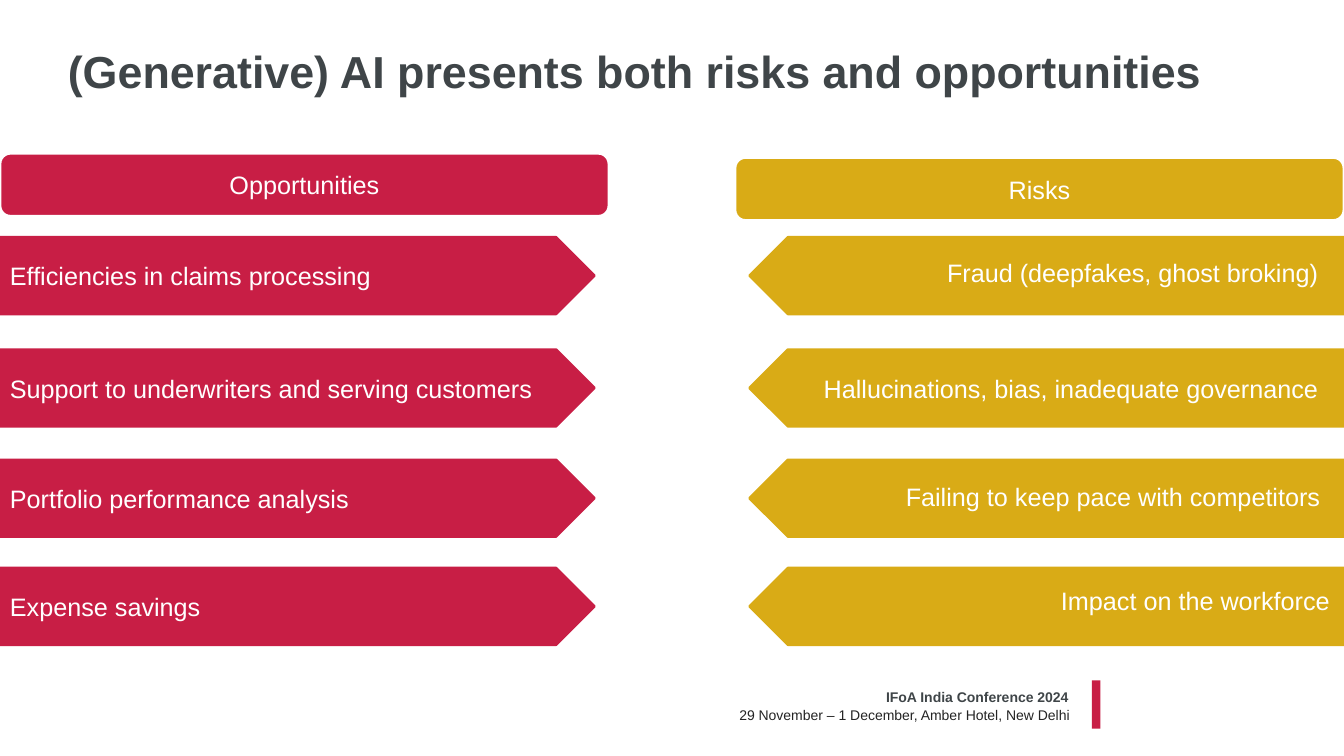
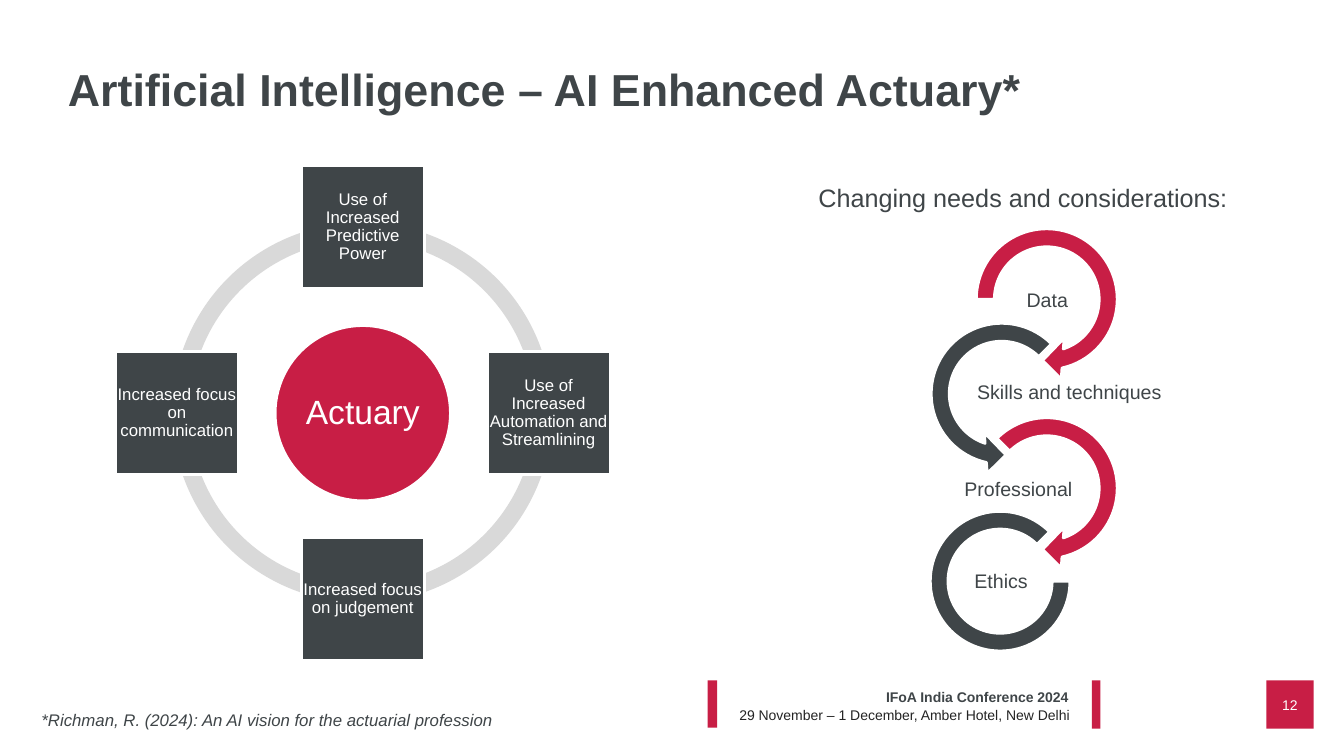
from pptx import Presentation
from pptx import util as u
from pptx.dml import color
from pptx.enum import shapes, text

PX = 9525
FONT = "Arial"
CRIMSON, GOLD, SLATE = "C81E45", "D9AB16", "3F4548"
INK, SILVER, WHITE = "242424", "D9D9D9", "FFFFFF"
PRESET = shapes.MSO_SHAPE
LEFT, CENTER, RIGHT = text.PP_ALIGN.LEFT, text.PP_ALIGN.CENTER, text.PP_ALIGN.RIGHT
TOP, MIDDLE = text.MSO_ANCHOR.TOP, text.MSO_ANCHOR.MIDDLE
QUARTER = 54

OPPORTUNITIES = [
    "Efficiencies in claims processing",
    "Support to underwriters and serving customers",
    "Portfolio performance analysis",
    "Expense savings",
]
RISKS = [
    ("Fraud (deepfakes, ghost broking)", 1265, 14),
    ("Hallucinations, bias, inadequate governance", 1265, 18),
    ("Failing to keep pace with competitors", 1267, 16),
    ("Impact on the workforce", 1276, 12),
]
ROW_TOPS = [226, 333, 438, 541]
SKILL_SHIFTS = [
    ("Use of Increased Predictive Power", 0, -1),
    ("Use of Increased Automation and Streamlining", 1, 0),
    ("Increased focus on judgement", 0, 1),
    ("Increased focus on communication", -1, 0),
]
NEEDS = [
    ("Data", 121, 79, 87),
    ("Skills and techniques", 142, 167, 197),
    ("Professional", 94, 259, 152),
    ("Ethics", 77, 347, 87),
]
LOOPS = [
    (PRESET.CIRCULAR_ARROW, 43, 0, 156, CRIMSON, [0.11, 11.42, 45, 108, 0.125]),
    (PRESET.LEFT_CIRCULAR_ARROW, 0, 90, 156, SLATE, [0.11, 11.42, 63, 189, 0.125]),
    (PRESET.CIRCULAR_ARROW, 43, 180, 156, CRIMSON, [0.11, 11.42, 45, 135, 0.125]),
    (PRESET.BLOCK_ARC, 10, 280, 133, SLATE, [0, 189, 0.127]),
]


def rgb(code):
    """Turn a hex string into a colour."""
    return color.RGBColor.from_string(code)


def emu(*lengths):
    """Turn px into EMU."""
    return [u.Emu(length * PX) for length in lengths]


def write(shape, words, size, ink, align=LEFT, anchor=MIDDLE, bold=False,
          italic=False, inset=None, spacing=None):
    """Put one formatted run into a shape."""
    frame = shape.text_frame
    frame.word_wrap = True
    frame.auto_size = text.MSO_AUTO_SIZE.NONE
    frame.vertical_anchor = anchor
    if inset is not None:
        frame.margin_left, frame.margin_top, frame.margin_right, frame.margin_bottom = emu(*[inset] * 4)
    line = frame.paragraphs[0]
    line.alignment = align
    if spacing:
        line.line_spacing = spacing
    run = line.add_run()
    run.text = words
    run.font.name, run.font.size = FONT, u.Pt(size)
    run.font.bold, run.font.italic = bold, italic
    run.font.color.rgb = rgb(ink)


def block(slide, preset, box, fill, outline=None, adjust=()):
    """Draw a flat preset shape in a px box."""
    shape = slide.shapes.add_shape(preset, *emu(*box))
    shape.shadow.inherit = False
    shape.fill.solid()
    shape.fill.fore_color.rgb = rgb(fill)
    if outline:
        shape.line.color.rgb = rgb(outline)
        shape.line.width = u.Pt(2)
    else:
        shape.line.fill.background()
    for index, value in enumerate(adjust):
        shape.adjustments[index] = value
    return shape


def label(slide, box, words, size, ink, **style):
    """Place a line of text in a px box."""
    write(slide.shapes.add_textbox(*emu(*box)), words, size, ink, **style)


def titled_slide(deck, layout, words, top):
    """Add a slide with its title at the given height."""
    slide = deck.slides.add_slide(layout)
    title = slide.shapes.title
    title.left, title.top, title.width, title.height = emu(55, top, 1171, 120)
    write(title, words, 32, SLATE, bold=True)
    return slide


def shared_footer(slide, layout):
    """Build the conference footer and hand it to the layout."""
    for spare in list(layout.placeholders)[1:]:
        layout.shapes.element.remove(spare.element)
    own = len(slide.shapes)
    block(slide, PRESET.RECTANGLE, (1040, 648, 8, 46), CRIMSON)
    label(slide, (756, 651, 271, 26), "IFoA India Conference 2024", 10, SLATE,
          align=RIGHT, anchor=TOP, bold=True)
    label(slide, (618, 668, 410, 26), "29 November – 1 December, Amber Hotel, New Delhi",
          10, INK, align=RIGHT, anchor=TOP)
    for part in list(slide.shapes)[own:]:
        layout.shapes.element.append(part.element)


def heading(slide, left, top, words, fill):
    """Draw the rounded heading of a column."""
    pill = block(slide, PRESET.ROUNDED_RECTANGLE, (left, top, 580, 60), fill, WHITE)
    write(pill, words, 18, WHITE, align=CENTER)


def opportunity_column(slide, left):
    """Draw the opportunities pointing right."""
    heading(slide, left, 146, "Opportunities", CRIMSON)
    for words, top in zip(OPPORTUNITIES, ROW_TOPS):
        plate = block(slide, PRESET.PENTAGON, (left, top, 566, 73), CRIMSON, CRIMSON)
        write(plate, words, 18, WHITE)


def risk_column(slide, left):
    """Draw the risks pointing left."""
    heading(slide, left, 150, "Risks", GOLD)
    for (words, right, drop), top in zip(RISKS, ROW_TOPS):
        plate = block(slide, PRESET.PENTAGON, (left + 14, top, 566, 73), GOLD, GOLD)
        plate.rotation = 180
        label(slide, (right - 520, top + drop, 520, 38), words, 18, WHITE,
              align=RIGHT, anchor=TOP)


def actuary_wheel(slide, left, top, ring):
    """Draw the hub, its ring and the four squares on it."""
    middle_x, middle_y = left + ring // 2, top + ring // 2
    hub, square, reach = 167, 117, 177
    for start in range(0, 4 * QUARTER, QUARTER):
        block(slide, PRESET.BLOCK_ARC, (left, top, ring, ring), SILVER,
              adjust=(start, (start + QUARTER) % (4 * QUARTER), 0.046))
    disc = block(slide, PRESET.OVAL, (middle_x - hub // 2, middle_y - hub // 2, hub, hub),
                 CRIMSON, WHITE)
    write(disc, "Actuary", 24, WHITE, align=CENTER, inset=2, spacing=0.9)
    for words, across, down in SKILL_SHIFTS:
        x = middle_x + across * reach - square // 2
        y = middle_y + down * reach - square // 2
        tile = block(slide, PRESET.RECTANGLE, (x, y, square, square), SLATE, WHITE)
        write(tile, words, 12, WHITE, align=CENTER, inset=1, spacing=0.9)


def needs_chain(slide, left, top):
    """Draw the linked loops with their labels."""
    for preset, x, y, size, fill, adjust in LOOPS:
        block(slide, preset, (left + x, top + y, size, size), fill, WHITE, adjust)
    for words, x, y, width in NEEDS:
        label(slide, (left + x - width // 2, top + y - 21, width, 43), words, 14, SLATE,
              align=CENTER, inset=1, spacing=0.9)


def page_marks(slide, number):
    """Draw the page number and the bar left of the footer."""
    badge = block(slide, PRESET.RECTANGLE, (1206, 648, 45, 46), CRIMSON)
    write(badge, number, 10, WHITE, align=CENTER)
    block(slide, PRESET.RECTANGLE, (674, 648, 9, 45), CRIMSON)


def main():
    """Build and save the two slides."""
    deck = Presentation()
    deck.slide_width, deck.slide_height = emu(1280, 720)
    layout = deck.slide_layouts[5]

    balance = titled_slide(deck, layout,
                           "(Generative) AI presents both risks and opportunities", 7)
    shared_footer(balance, layout)
    opportunity_column(balance, 0)
    risk_column(balance, 700)

    actuary = titled_slide(deck, layout, "Artificial Intelligence – AI Enhanced Actuary*", 24)
    page_marks(actuary, "12")
    label(actuary, (30, 671, 456, 29),
          "*Richman, R. (2024): An AI vision for the actuarial profession",
          12, SLATE, anchor=TOP, italic=True)
    actuary_wheel(actuary, 164, 212, 362)
    needs_chain(actuary, 876, 207)
    label(actuary, (770, 169, 453, 38), "Changing needs and considerations:", 18, SLATE,
          anchor=TOP)

    deck.save("out.pptx")


if __name__ == "__main__":
    main()
